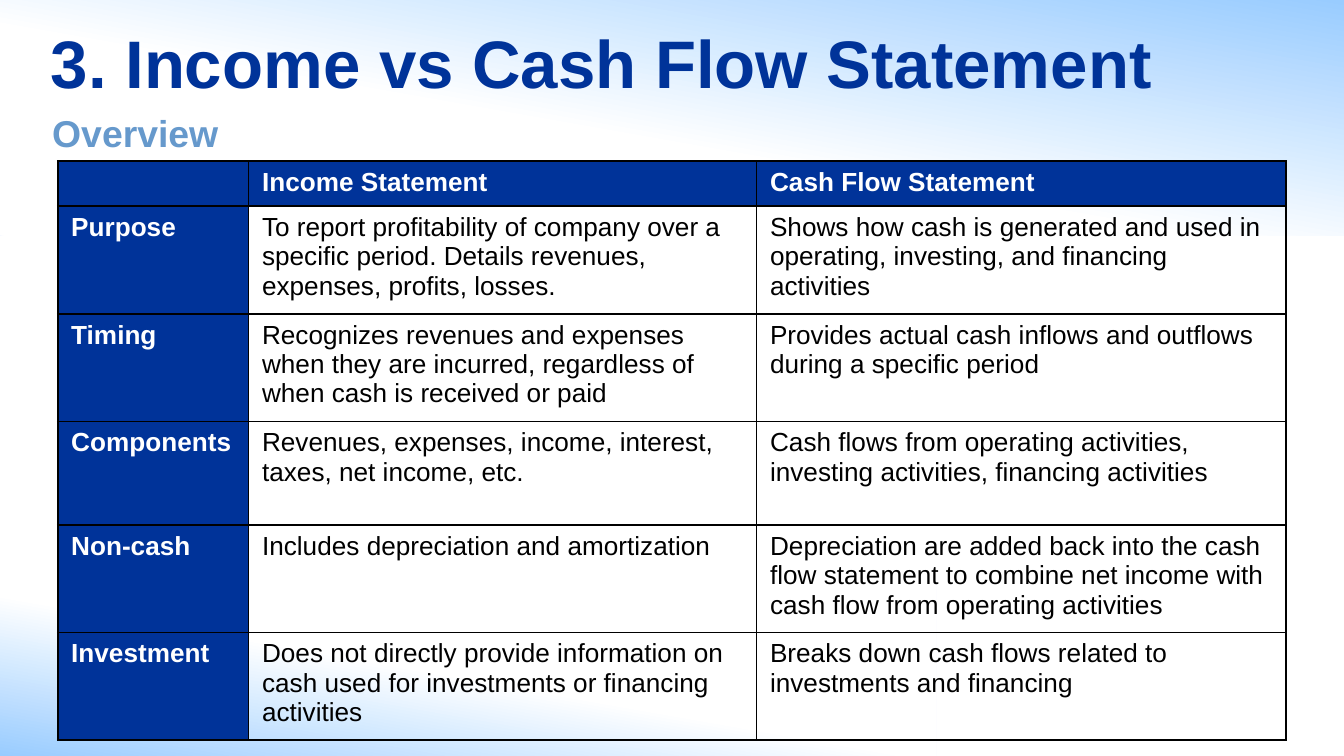
from lxml.etree import SubElement
from pptx import Presentation
from pptx.dml.color import RGBColor
from pptx.enum.shapes import MSO_SHAPE as SHAPE
from pptx.enum.text import MSO_ANCHOR as ANCHOR, MSO_AUTO_SIZE as AUTO
from pptx.oxml import parse_xml
from pptx.oxml.ns import nsdecls, qn
from pptx.util import Inches, Pt

NAVY, STEEL, SKY = "003399", "6699CC", "99CCFF"
WHITE, BLACK = "FFFFFF", "000000"

ROWS = [
    ("", "Income Statement", "Cash Flow Statement"),
    ("Purpose",
     "To report profitability of company over a specific period. Details revenues, expenses, profits, losses.",
     "Shows how cash is generated and used in operating, investing, and financing activities"),
    ("Timing",
     "Recognizes revenues and expenses when they are incurred, regardless of when cash is received or paid",
     "Provides actual cash inflows and outflows during a specific period"),
    ("Components",
     "Revenues, expenses, income, interest, taxes, net income, etc.",
     "Cash flows from operating activities, investing activities, financing activities"),
    ("Non-cash",
     "Includes depreciation and amortization",
     "Depreciation are added back into the cash flow statement to combine net income with cash flow from operating activities"),
    ("Investment",
     "Does not directly provide information on cash used for investments or financing activities",
     "Breaks down cash flows related to investments and financing"),
]


def rgb(value):
    return RGBColor.from_string(value)


class Deck:
    font = "Arial"

    def __init__(self, width, height):
        self.prs = Presentation()
        self.prs.slide_width, self.prs.slide_height = Inches(width), Inches(height)
        self.slide = self.prs.slides.add_slide(self.prs.slide_layouts[6])
        self.slide.background.fill.solid()
        self.slide.background.fill.fore_color.rgb = rgb(WHITE)

    def style(self, p, size, color, bold):
        p.font.name, p.font.size, p.font.bold = self.font, Pt(size), bold
        p.font.color.rgb = rgb(color)

    def glow(self, box, angle, white_at):
        sp = self.slide.shapes.add_shape(SHAPE.RECTANGLE, *map(Inches, box))
        sp.shadow.inherit = False
        sp.line.fill.background()
        sp.fill.gradient()
        sp.fill.gradient_angle = angle
        for stop, color, position in zip(sp.fill.gradient_stops, (SKY, WHITE), (0, white_at)):
            stop.color.rgb, stop.position = rgb(color), position

    def text(self, box, text, size, color, anchor=ANCHOR.TOP, auto_size=AUTO.NONE):
        tf = self.slide.shapes.add_textbox(*map(Inches, box)).text_frame
        tf.word_wrap, tf.auto_size, tf.vertical_anchor = True, auto_size, anchor
        tf.text = text
        self.style(tf.paragraphs[0], size, color, True)

    def borders(self, cell, color, width):
        tc_pr = cell._tc.get_or_add_tcPr()
        for i, side in enumerate("LRTB"):
            tc_pr.insert(i, parse_xml(
                f'<a:ln{side} {nsdecls("a")} w="{Pt(width)}"><a:solidFill>'
                f'<a:srgbClr val="{color}"/></a:solidFill></a:ln{side}>'))

    def cell(self, cell, text, size, heading):
        cell.text = text
        p = cell.text_frame.paragraphs[0]
        self.style(p, size, WHITE if heading else BLACK, heading)
        if not text:
            SubElement(p._p, qn("a:endParaRPr"), sz=str(size * 100))
        if heading:
            cell.fill.solid()
            cell.fill.fore_color.rgb = rgb(NAVY)
        else:
            cell.fill.background()
        self.borders(cell, BLACK, 1)

    def table(self, left, top, widths, heights, rows, size):
        box = left, top, sum(widths), sum(heights)
        table = self.slide.shapes.add_table(len(rows), len(widths), *map(Inches, box)).table
        table.first_row = table.horz_banding = False
        for column, width in zip(table.columns, widths):
            column.width = Inches(width)
        for i, (row, height) in enumerate(zip(rows, heights)):
            table.rows[i].height = Inches(height)
            for j, text in enumerate(row):
                self.cell(table.cell(i, j), text, size, i == 0 or j == 0)


def main():
    deck = Deck(10, 10 * 9 / 16)
    deck.glow((0, 4.35, 6.97, 1.28), 80, 0.48)
    deck.glow((0, 0, 10, 1.75), 260, 0.56)
    deck.text((0.28, 0.1, 10.16, 0.71), "3. Income vs Cash Flow Statement", 36, NAVY, ANCHOR.MIDDLE)
    deck.text((0.29, 0.77, 7.94, 0.44), "Overview", 20, STEEL, auto_size=AUTO.SHAPE_TO_FIT_TEXT)
    deck.table(0.43, 1.2, (1.42, 3.78, 3.94), [0.32] + [0.77] * 5, ROWS, 14)
    deck.prs.save("out.pptx")


if __name__ == "__main__":
    main()
